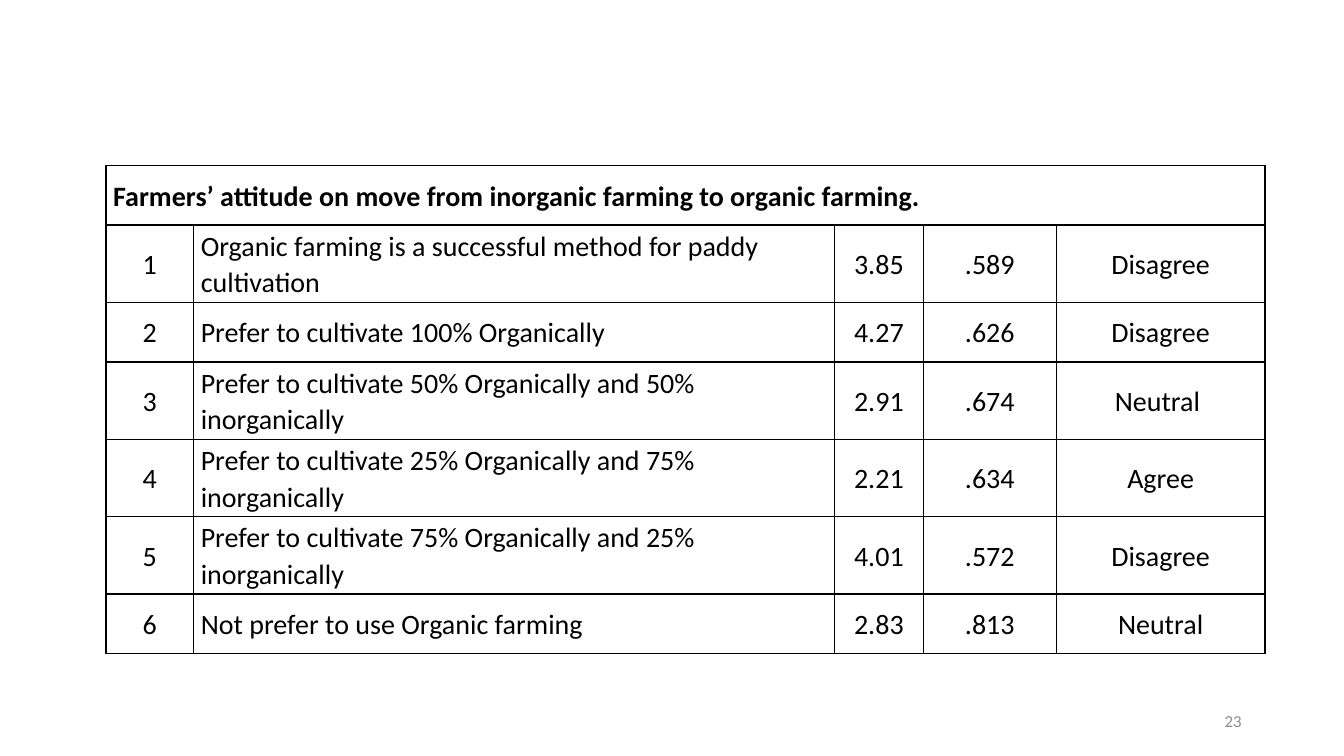
from dataclasses import dataclass

from lxml import etree
from pptx import Presentation
from pptx.dml.color import RGBColor
from pptx.enum.text import MSO_ANCHOR, PP_ALIGN
from pptx.oxml.ns import qn
from pptx.util import Cm, Pt

LEFT, CENTER, RIGHT = PP_ALIGN.LEFT, PP_ALIGN.CENTER, PP_ALIGN.RIGHT
MIDDLE = MSO_ANCHOR.MIDDLE


@dataclass(frozen=True)
class Theme:
    font: str = "Calibri"
    ink: str = "000000"
    muted: str = "8C8C8C"
    table_size: int = 20
    number_size: int = 12
    border: int = 1


THEME = Theme()

TITLE = "Farmers’ attitude on move from inorganic farming to organic farming."
STATEMENTS = [
    ("Organic farming is a successful method for paddy cultivation", "3.85", ".589", "Disagree"),
    ("Prefer to cultivate 100% Organically", "4.27", ".626", "Disagree"),
    ("Prefer to cultivate 50% Organically and 50% inorganically", "2.91", ".674", "Neutral "),
    ("Prefer to cultivate 25% Organically and 75% inorganically", "2.21", ".634", "Agree"),
    ("Prefer to cultivate 75% Organically and 25% inorganically", "4.01", ".572", "Disagree"),
    ("Not prefer to use Organic farming", "2.83", ".813", "Neutral"),
]
COLUMN_WIDTHS = [2.21, 16.15, 2.24, 3.35, 5.26]
STATEMENT_COLUMN = 1
ONE_LINE, TWO_LINES = 1.5, 1.95
ONE_LINE_ROWS = (0, 2, 6)


def style_paragraph(para, size, color, align, bold=False):
    para.alignment = align
    para.font.name = THEME.font
    para.font.size = Pt(size)
    para.font.bold = bold
    para.font.color.rgb = RGBColor.from_string(color)


def draw_borders(cell):
    properties = cell._tc.get_or_add_tcPr()
    for side in ("a:lnL", "a:lnR", "a:lnT", "a:lnB"):
        line = etree.SubElement(properties, qn(side), w=str(Pt(THEME.border)))
        fill = etree.SubElement(line, qn("a:solidFill"))
        etree.SubElement(fill, qn("a:srgbClr"), val=THEME.ink)


def fill_cell(cell, text, align, bold=False):
    cell.text = text
    cell.vertical_anchor = MIDDLE
    cell.margin_left = cell.margin_right = Cm(0.18)
    cell.margin_top = cell.margin_bottom = 0
    para = cell.text_frame.paragraphs[0]
    para.line_spacing = 1.07
    para.space_after = Pt(8)
    style_paragraph(para, THEME.table_size, THEME.ink, align, bold)


def add_attitude_table(page):
    heights = [ONE_LINE if row in ONE_LINE_ROWS else TWO_LINES
               for row in range(len(STATEMENTS) + 1)]
    table = page.shapes.add_table(
        len(heights), len(COLUMN_WIDTHS), Cm(2.67), Cm(4.17),
        Cm(sum(COLUMN_WIDTHS)), Cm(sum(heights))).table
    table.first_row = table.horz_banding = False
    for column, width in zip(table.columns, COLUMN_WIDTHS):
        column.width = Cm(width)
    for row, height in zip(table.rows, heights):
        row.height = Cm(height)
    for cell in table.iter_cells():
        draw_borders(cell)
        cell.fill.background()

    table.cell(0, 0).merge(table.cell(0, len(COLUMN_WIDTHS) - 1))
    fill_cell(table.cell(0, 0), TITLE, LEFT, bold=True)
    for number, statement in enumerate(STATEMENTS, start=1):
        for column, text in enumerate((str(number), *statement)):
            align = LEFT if column == STATEMENT_COLUMN else CENTER
            fill_cell(table.cell(number, column), text, align)


def add_page_number(page, number):
    box = page.shapes.add_textbox(Cm(23.92), Cm(17.65), Cm(7.62), Cm(1.02))
    frame = box.text_frame
    frame.word_wrap = True
    frame.vertical_anchor = MIDDLE
    frame.text = number
    style_paragraph(frame.paragraphs[0], THEME.number_size, THEME.muted, RIGHT)


def main():
    deck = Presentation()
    deck.slide_width, deck.slide_height = Cm(33.87), Cm(19.05)
    page = deck.slides.add_slide(deck.slide_layouts[6])
    add_page_number(page, "23")
    add_attitude_table(page)
    deck.save("out.pptx")


if __name__ == "__main__":
    main()
